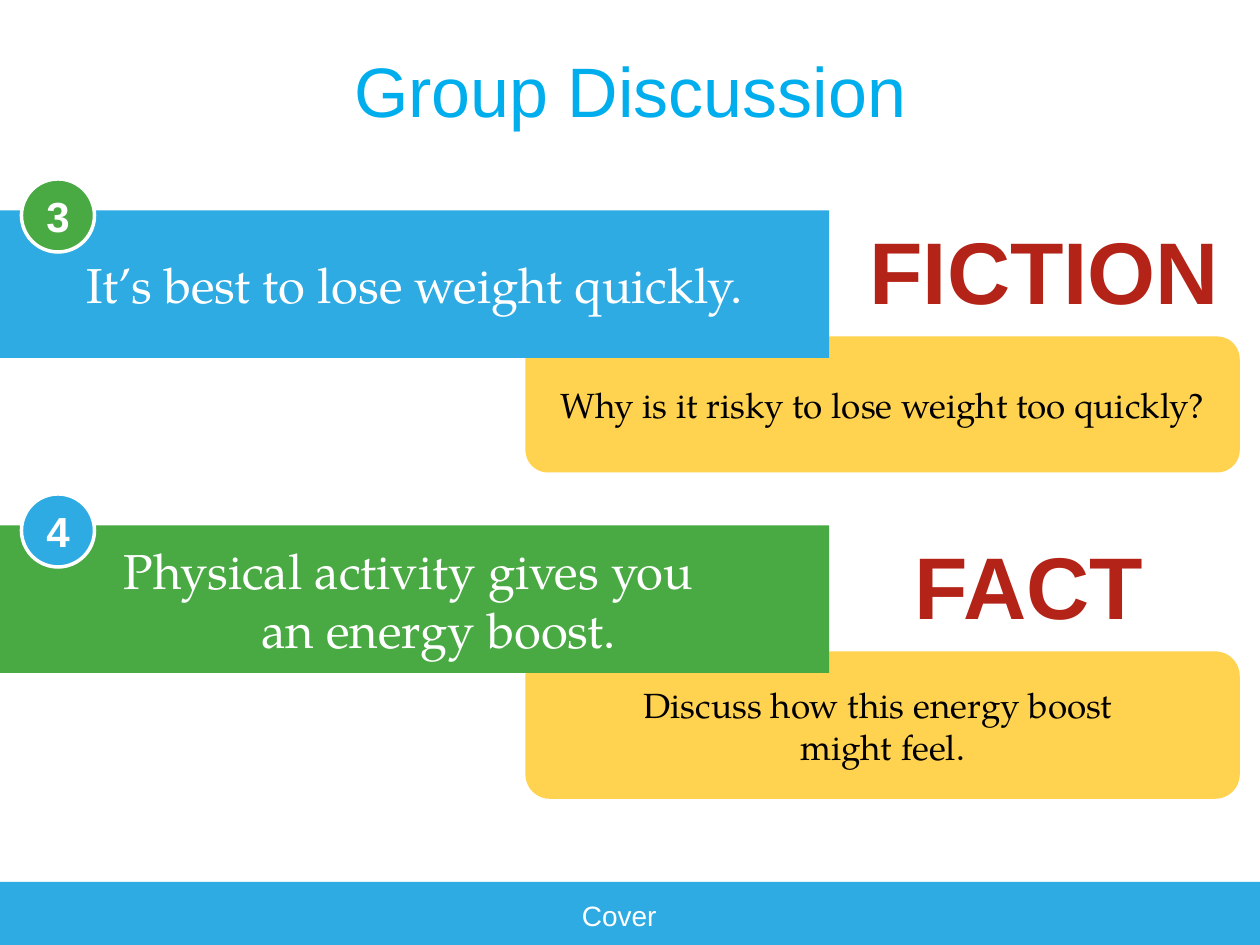
from pptx import Presentation
from pptx.dml.color import RGBColor
from pptx.enum.shapes import MSO_SHAPE as Kind
from pptx.enum.text import MSO_ANCHOR as Anchor, MSO_AUTO_SIZE as Fit, PP_ALIGN as Align
from pptx.util import Inches, Pt

BLUE, GREEN, GOLD, RED, WHITE = "2EABE3", "49A942", "FFD24F", "B32317", "FFFFFF"
SERIF, SANS = "TeX Gyre Pagella", "Arial"


def paint(item, color):
    item.fill.solid()
    item.fill.fore_color.rgb = RGBColor.from_string(color)


def write(shape, text, size, face, color, bold=False, anchor=Anchor.MIDDLE):
    frame = shape.text_frame
    frame.text = text
    frame.word_wrap = True
    frame.auto_size = Fit.NONE
    frame.vertical_anchor = anchor
    par = frame.paragraphs[0]
    par.alignment = Align.CENTER
    par.space_before = Pt(0)
    for run in par.runs:
        run.font.size = Pt(size)
        run.font.name = face
        run.font.bold = bold
        paint(run.font, color)


deck = Presentation()
deck.slide_width, deck.slide_height = Inches(10), Inches(7.5)
slide = deck.slides.add_slide(deck.slide_layouts[0])
shapes = slide.shapes
title, sub = slide.placeholders
tree = title.element.getparent()

foot = shapes.add_shape(Kind.RECTANGLE, 0, Inches(7), Inches(10), Inches(0.5))
foot.shadow.inherit = False
paint(foot, BLUE)
foot.line.fill.background()

title.left, title.top = Inches(0.5), Inches(0.25)
title.width, title.height = Inches(9), Inches(0.92)
write(title, "Group Discussion", 40, SANS, "00AEED")

rows = [
    ("3", "It’s best to lose weight quickly.", "FICTION", 3.08,
     "Why is it risky to lose weight too quickly?", 1.08, BLUE, GREEN),
    ("4", "Physical activity gives you \van energy boost.", "FACT", 2.83,
     "Discuss how this energy boost \vmight feel.", 1.17, GREEN, BLUE),
]
for i, (num, claim, word, wide, ask, high, main, spot) in enumerate(rows):
    top = 1.67 + 2.5 * i

    note = shapes.add_shape(Kind.ROUNDED_RECTANGLE, Inches(4.17), Inches(top + 1),
                            Inches(5.67), Inches(high))
    note.shadow.inherit = False
    paint(note, GOLD)
    note.line.fill.background()
    write(note, ask, 20, SERIF, "000000")

    if i == 0:
        bar = sub
        tree.append(bar.element)
        bar.left, bar.top = Inches(0), Inches(top)
        bar.width, bar.height = Inches(6.58), Inches(1.17)
    else:
        bar = shapes.add_shape(Kind.RECTANGLE, 0, Inches(top), Inches(6.58), Inches(1.17))
        bar.shadow.inherit = False
    paint(bar, main)
    bar.line.fill.background()
    write(bar, claim, 28, SERIF, WHITE)
    props = bar.text_frame.paragraphs[0]._p.get_or_add_pPr()
    props.set("marL", str(Inches(0.38)))
    props.set("indent", str(Inches(-0.38)))

    label = shapes.add_textbox(Inches(6.75), Inches(top), Inches(wide), Inches(0.94))
    write(label, word, 50, SANS, RED, True, Anchor.TOP)

    badge = shapes.add_shape(Kind.OVAL, Inches(0.17), Inches(top - 0.25),
                             Inches(0.58), Inches(0.58))
    badge.shadow.inherit = False
    paint(badge, spot)
    paint(badge.line, WHITE)
    badge.line.width = Pt(2)
    write(badge, num, 24, SANS, WHITE, True)

cover = shapes.add_textbox(Inches(3.75), Inches(7.08), Inches(2.33), Inches(0.37))
write(cover, "Cover", 16, SANS, WHITE, anchor=Anchor.TOP)

deck.save("out.pptx")
